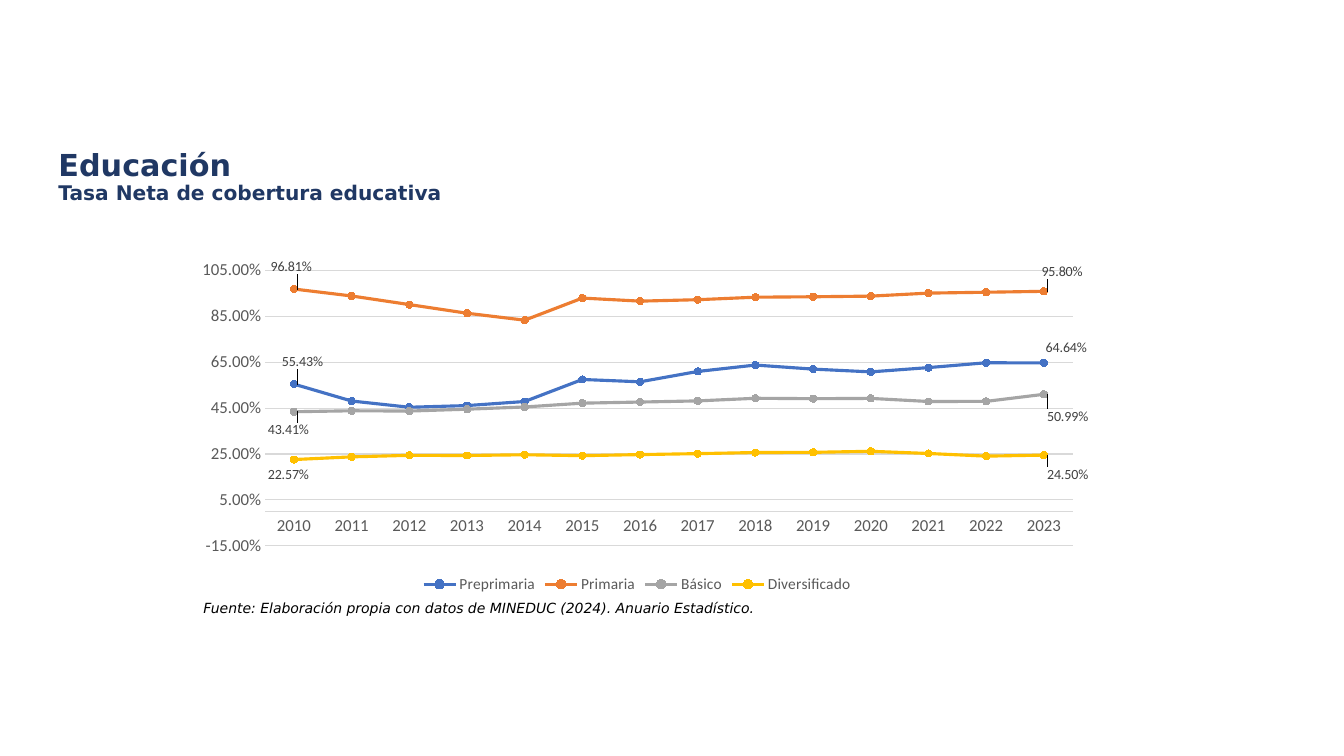
from dataclasses import dataclass

from lxml.etree import SubElement
from pptx import Presentation
from pptx.chart.data import CategoryChartData
from pptx.dml.color import RGBColor
from pptx.enum.chart import XL_CHART_TYPE as ChartType
from pptx.enum.chart import XL_LABEL_POSITION as LabelPos
from pptx.enum.chart import XL_LEGEND_POSITION as LegendPos
from pptx.enum.chart import XL_MARKER_STYLE as Marker
from pptx.enum.chart import XL_TICK_MARK as Tick
from pptx.enum.text import MSO_ANCHOR, MSO_AUTO_SIZE, PP_ALIGN
from pptx.oxml import parse_xml
from pptx.oxml.ns import nsdecls, qn
from pptx.util import Inches, Pt

WIDTH, HEIGHT = Inches(13.33), Inches(7.5)
NAVY, BLACK, GREY, LABEL_GREY, RULE = "203864", "000000", "595959", "404040", "D9D9D9"
HEADING_FONT, CHART_FONT = "DejaVu Sans", "Calibri"
PERCENT = "0.00%"
YEARS = range(2010, 2024)
LEADER_LINES = (
    f'<c:extLst {nsdecls("c")}><c:ext uri="{{CE6537A1-D6FC-4f65-9D91-7224C49458BB}}" '
    'xmlns:c15="http://schemas.microsoft.com/office/drawing/2012/chart">'
    '<c15:showLeaderLines val="1"/></c:ext></c:extLst>'
)


@dataclass(frozen=True)
class Box:
    """A place on the slide, in percent of its width and height."""
    left: float
    top: float
    width: float
    height: float

    def emu(self) -> tuple[int, int, int, int]:
        return (int(WIDTH * self.left / 100), int(HEIGHT * self.top / 100),
                int(WIDTH * self.width / 100), int(HEIGHT * self.height / 100))


@dataclass(frozen=True)
class Level:
    """A school level; label shifts are points right and down from the default spot."""
    name: str
    color: str
    percents: tuple[float, ...]
    first_shift: tuple[int, int]
    last_shift: tuple[int, int]


TITLE_BOX = Box(3.6, 18.93, 86.27, 13.07)
CHART_BOX = Box(13.65, 33.47, 67.52, 45.6)
SOURCE_BOX = Box(14.4, 78.93, 46.89, 3.47)

LEVELS = (
    Level("Preprimaria", "4472C4",
          (55.43, 48.07, 45.36, 46.08, 47.85, 57.44, 56.43,
           60.93, 63.72, 61.96, 60.75, 62.6, 64.72, 64.64), (-14, -16), (-4, -11)),
    Level("Primaria", "ED7D31",
          (96.81, 93.78, 90.03, 86.27, 83.25, 92.87, 91.54,
           92.16, 93.24, 93.44, 93.71, 95.02, 95.41, 95.8), (-22, -16), (-7, -14)),
    Level("Básico", "A5A5A5",
          (43.41, 43.81, 43.69, 44.5, 45.47, 47.13, 47.61,
           48.11, 49.26, 49.09, 49.21, 47.85, 47.91, 50.99), (-24, 13), (-3, 16)),
    Level("Diversificado", "FFC000",
          (22.57, 23.74, 24.41, 24.33, 24.66, 24.27, 24.74,
           25.15, 25.63, 25.72, 26.16, 25.22, 24.06, 24.5), (-24, 11), (-3, 14)),
)


def rgb(color: str) -> RGBColor:
    return RGBColor.from_string(color)


def style(font, size: float, color: str, name: str, bold=False, italic=False) -> None:
    font.size, font.name, font.bold, font.italic = Pt(size), name, bold, italic
    font.color.rgb = rgb(color)


def rule(line, color: str, width: float) -> None:
    line.color.rgb = rgb(color)
    line.width = Pt(width)


def add_layout(parent, position: int, **values: float) -> None:
    """Insert a manual chart layout among the children of parent."""
    layout = parse_xml(f'<c:layout {nsdecls("c")}><c:manualLayout/></c:layout>')
    for tag, value in values.items():
        SubElement(layout[0], qn(f"c:{tag}")).set("val", str(value))
    parent.insert(position, layout)


def add_title(slide) -> None:
    title = slide.shapes.title
    title.left, title.top, title.width, title.height = TITLE_BOX.emu()
    tf = title.text_frame
    tf.auto_size, tf.vertical_anchor = MSO_AUTO_SIZE.NONE, MSO_ANCHOR.TOP
    tf.margin_top = Inches(0.07)
    p = tf.paragraphs[0]
    p.alignment, p.line_spacing = PP_ALIGN.LEFT, 0.9
    r = p.add_run()
    r.text = "Educación"
    style(r.font, 21.6, NAVY, HEADING_FONT, bold=True)
    p.add_line_break()
    r = p.add_run()
    r.text = "Tasa Neta de cobertura educativa"
    style(r.font, 14.4, NAVY, HEADING_FONT, bold=True)


def add_source(slide) -> None:
    tf = slide.shapes.add_textbox(*SOURCE_BOX.emu()).text_frame
    tf.word_wrap = True
    p = tf.paragraphs[0]
    p.line_spacing = 0.9
    r = p.add_run()
    r.text = "Fuente: Elaboración propia con datos de MINEDUC (2024). Anuario Estadístico."
    style(r.font, 10, BLACK, HEADING_FONT, italic=True)


def format_series(series, level: Level) -> None:
    series.smooth = False
    rule(series.format.line, level.color, 2.25)
    marker = series.marker
    marker.style, marker.size = Marker.CIRCLE, 5
    marker.format.fill.solid()
    marker.format.fill.fore_color.rgb = rgb(level.color)
    rule(marker.format.line, level.color, 0.75)

    series.data_labels.show_value = False
    _, _, width, height = CHART_BOX.emu()
    for index, (right, down) in ((0, level.first_shift), (len(YEARS) - 1, level.last_shift)):
        label = series.points[index].data_label
        label.position = LabelPos.RIGHT
        style(label.font, 10, LABEL_GREY, CHART_FONT)
    labels = series.data_labels._element
    for label, (right, down) in zip(labels.findall(qn("c:dLbl")),
                                    (level.first_shift, level.last_shift)):
        add_layout(label, 1, x=Pt(right) / width, y=Pt(down) / height)
    labels.append(parse_xml(LEADER_LINES))


def format_axes(chart) -> None:
    for axis in (chart.category_axis, chart.value_axis):
        axis.major_tick_mark = axis.minor_tick_mark = Tick.NONE
        style(axis.tick_labels.font, 12, GREY, CHART_FONT)
    rule(chart.category_axis.format.line, RULE, 0.75)
    values = chart.value_axis
    values.minimum_scale, values.maximum_scale, values.major_unit = -0.15, 1.05, 0.2
    values.tick_labels.number_format = PERCENT
    values.tick_labels.number_format_is_linked = False
    values.format.line.fill.background()
    rule(values.major_gridlines.format.line, RULE, 0.75)


def add_coverage_chart(slide) -> None:
    data = CategoryChartData(number_format=PERCENT)
    data.categories = [str(year) for year in YEARS]
    for level in LEVELS:
        data.add_series(level.name, [round(v / 100, 4) for v in level.percents])
    chart = slide.shapes.add_chart(ChartType.LINE_MARKERS, *CHART_BOX.emu(), data).chart
    style(chart.font, 10, BLACK, CHART_FONT)
    chart.has_title = False
    chart.has_legend = True
    chart.legend.position, chart.legend.include_in_layout = LegendPos.BOTTOM, False
    style(chart.legend.font, 11, GREY, CHART_FONT)
    plot = chart.plots[0]
    plot.vary_by_categories = False
    for series, level in zip(plot.series, LEVELS):
        format_series(series, level)
    format_axes(chart)

    area = chart._chartSpace.chart.plotArea
    for old in area.findall(qn("c:layout")):
        area.remove(old)
    add_layout(area, 0, layoutTarget="inner", xMode="edge", yMode="edge",
               x=0.09, y=0.05, w=0.89, h=0.8)


def main() -> None:
    prs = Presentation()
    prs.slide_width, prs.slide_height = WIDTH, HEIGHT
    slide = prs.slides.add_slide(prs.slide_layouts[5])
    add_title(slide)
    add_coverage_chart(slide)
    add_source(slide)
    prs.save("out.pptx")


if __name__ == "__main__":
    main()
